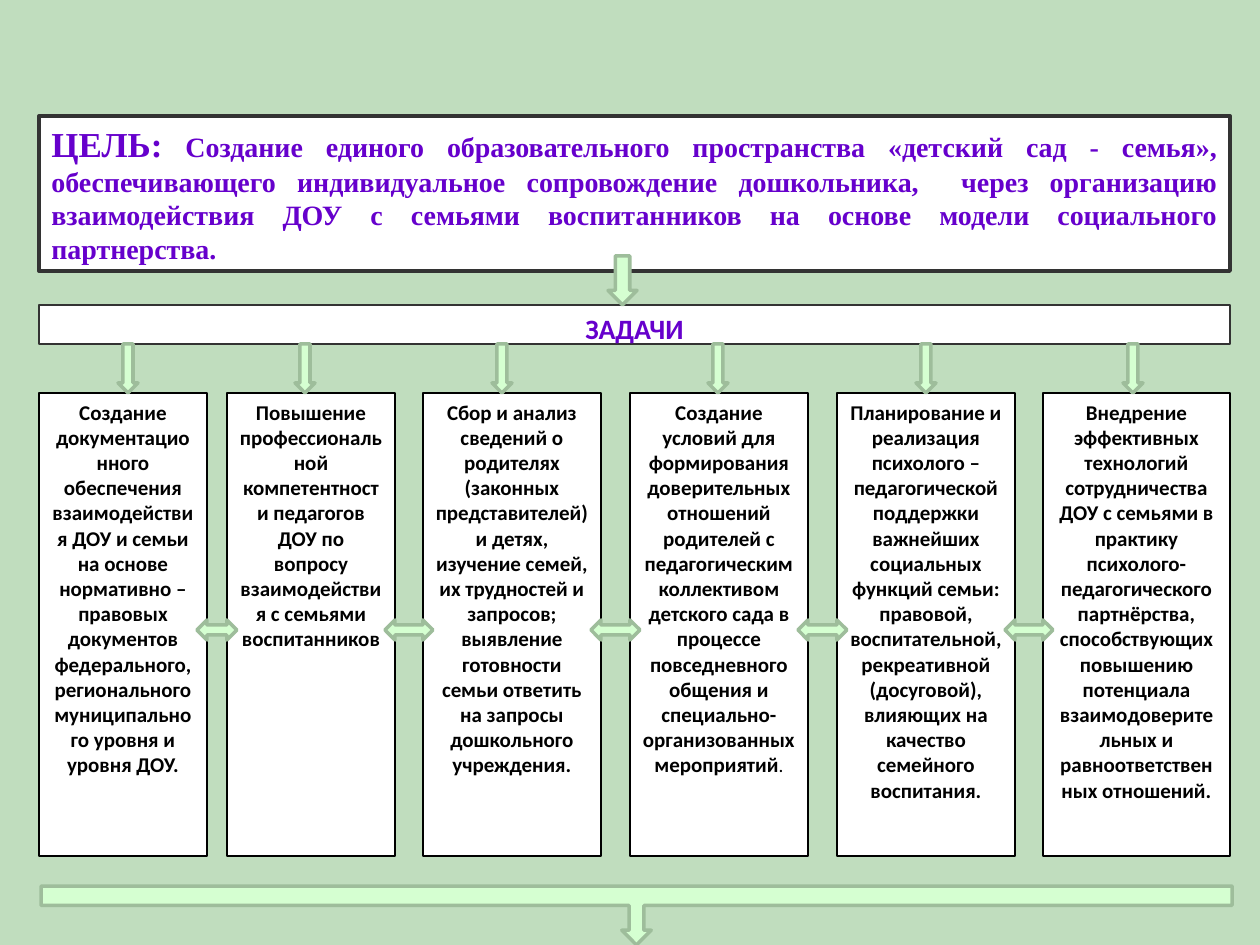
"""Build a slide that links one goal to six tasks."""
import dataclasses

import pptx
import pptx.dml.color
import pptx.enum.shapes
import pptx.enum.text
import pptx.util

SCALE = 914400 / 126
KIND = pptx.enum.shapes.MSO_SHAPE
ALIGN = pptx.enum.text.PP_ALIGN


@dataclasses.dataclass(frozen=True)
class Theme:
    """Hold the colours, fonts and type sizes."""
    back: str = "C0DDBE"
    paper: str = "FFFFFF"
    frame: str = "333333"
    ink: str = "000000"
    title: str = "6600CC"
    arrow: str = "D5FFD1"
    edge: str = "9EBD9B"
    serif: str = "Times New Roman"
    sans: str = "Calibri"
    big: int = 20
    mid: int = 16
    small: int = 12
    tiny: int = 11


THEME = Theme()
GOAL = (
    "ЦЕЛЬ:",
    " Создание единого образовательного пространства «детский сад - семья», "
    "обеспечивающего индивидуальное сопровождение дошкольника,  через "
    "организацию взаимодействия ДОУ с семьями воспитанников на основе модели "
    "социального партнерства.",
)
TASKS = [
    (39, 168, 118,
     "Создание документационного обеспечения взаимодействия ДОУ и семьи на "
     "основе нормативно – правовых документов федерального, регионального "
     "муниципального уровня и уровня ДОУ."),
    (227, 168, 295,
     "Повышение профессиональной компетентности педагогов ДОУ по вопросу "
     "взаимодействия с семьями воспитанников"),
    (423, 178, 492,
     "Сбор и анализ сведений о родителях (законных представителей) и детях, "
     "изучение семей, их трудностей и запросов; выявление готовности семьи "
     "ответить на запросы дошкольного учреждения."),
    (630, 178, 708,
     "Создание условий для формирования доверительных отношений родителей с "
     "педагогическим коллективом детского сада в процессе повседневного "
     "общения и специально-организованных мероприятий"),
    (837, 178, 916,
     "Планирование и реализация психолого – педагогической поддержки "
     "важнейших социальных функций семьи: правовой, воспитательной, "
     "рекреативной (досуговой), влияющих на качество семейного воспитания."),
    (1043, 187, 1123,
     "Внедрение эффективных технологий сотрудничества ДОУ с семьями в "
     "практику психолого-педагогического партнёрства, способствующих "
     "повышению потенциала взаимодоверительных и равноответственных "
     "отношений."),
]
DOT_TASK = 3


def px(size):
    """Turn pixels into EMU."""
    return pptx.util.Emu(round(size * SCALE))


def tint(code):
    """Turn a hex code into a colour."""
    return pptx.dml.color.RGBColor.from_string(code)


def add_shape(slide, kind, area, fill, line, weight):
    """Add a flat shape with a fill and an outline."""
    shape = slide.shapes.add_shape(kind, *map(px, area))
    shape.shadow.inherit = False
    shape.fill.solid()
    shape.fill.fore_color.rgb = tint(fill)
    shape.line.color.rgb = tint(line)
    shape.line.width = pptx.util.Pt(weight)
    return shape


def add_arrow(slide, kind, area):
    """Add a green block arrow."""
    return add_shape(slide, kind, area, THEME.arrow, THEME.edge, 2)


def style_run(run, face, size, color, bold=True):
    """Set the font of one run."""
    run.font.name = face
    run.font.size = pptx.util.Pt(size)
    run.font.bold = bold
    run.font.color.rgb = tint(color)


def add_box(slide, area, line, weight, text, align, after=10):
    """Add a white box with one paragraph and return the paragraph."""
    shape = add_shape(slide, KIND.RECTANGLE, area, THEME.paper, line, weight)
    frame = shape.text_frame
    frame.word_wrap = True
    frame.vertical_anchor = pptx.enum.text.MSO_ANCHOR.TOP
    frame.text = text
    para = frame.paragraphs[0]
    para.alignment = align
    para.space_after = pptx.util.Pt(after)
    return para


def add_head(slide):
    """Add the goal, the task heading and the arrow between them."""
    lead, rest = GOAL
    para = add_box(slide, (39, 116, 1191, 155), THEME.frame, 2.25, lead, ALIGN.JUSTIFY)
    style_run(para.runs[0], THEME.serif, THEME.big, THEME.title)
    tail = para.add_run()
    tail.text = rest
    style_run(tail, THEME.serif, THEME.mid, THEME.title)
    para = add_box(slide, (39, 305, 1191, 39), THEME.frame, 1.5, "ЗАДАЧИ", ALIGN.CENTER, 6)
    style_run(para.runs[0], THEME.sans, THEME.mid, THEME.title)
    add_arrow(slide, KIND.DOWN_ARROW, (608, 256, 29, 49))


def add_tasks(slide):
    """Add the task cards and the arrows that lead to them."""
    for num, (left, width, tip, text) in enumerate(TASKS):
        para = add_box(slide, (left, 393, width, 463), THEME.ink, 0.75, text, ALIGN.CENTER)
        style_run(para.runs[0], THEME.sans, THEME.small, THEME.ink)
        if num == DOT_TASK:
            dot = para.add_run()
            dot.text = "."
            style_run(dot, THEME.sans, THEME.tiny, THEME.ink, False)
        add_arrow(slide, KIND.DOWN_ARROW, (tip, 344, 20, 49))


def add_links(slide):
    """Bridge each gap between cards with a two-way arrow."""
    lap = 10
    for (left, width, *_), (end, *_) in zip(TASKS, TASKS[1:]):
        start = left + width - lap
        add_arrow(slide, KIND.LEFT_RIGHT_ARROW, (start, 620, end + lap - start, 20))


def add_foot(slide):
    """Add the wide callout that leads off the slide."""
    foot = add_arrow(slide, KIND.DOWN_ARROW_CALLOUT, (41, 886, 1191, 59))
    for num, value in enumerate((0.25, 0.25, 0.25, 0.33)):
        foot.adjustments[num] = value


def main():
    """Build and save the slide."""
    deck = pptx.Presentation()
    deck.slide_width, deck.slide_height = px(1260), px(945)
    slide = deck.slides.add_slide(deck.slide_layouts[6])
    slide.background.fill.solid()
    slide.background.fill.fore_color.rgb = tint(THEME.back)
    add_head(slide)
    add_tasks(slide)
    add_links(slide)
    add_foot(slide)
    deck.save("out.pptx")


if __name__ == "__main__":
    main()
